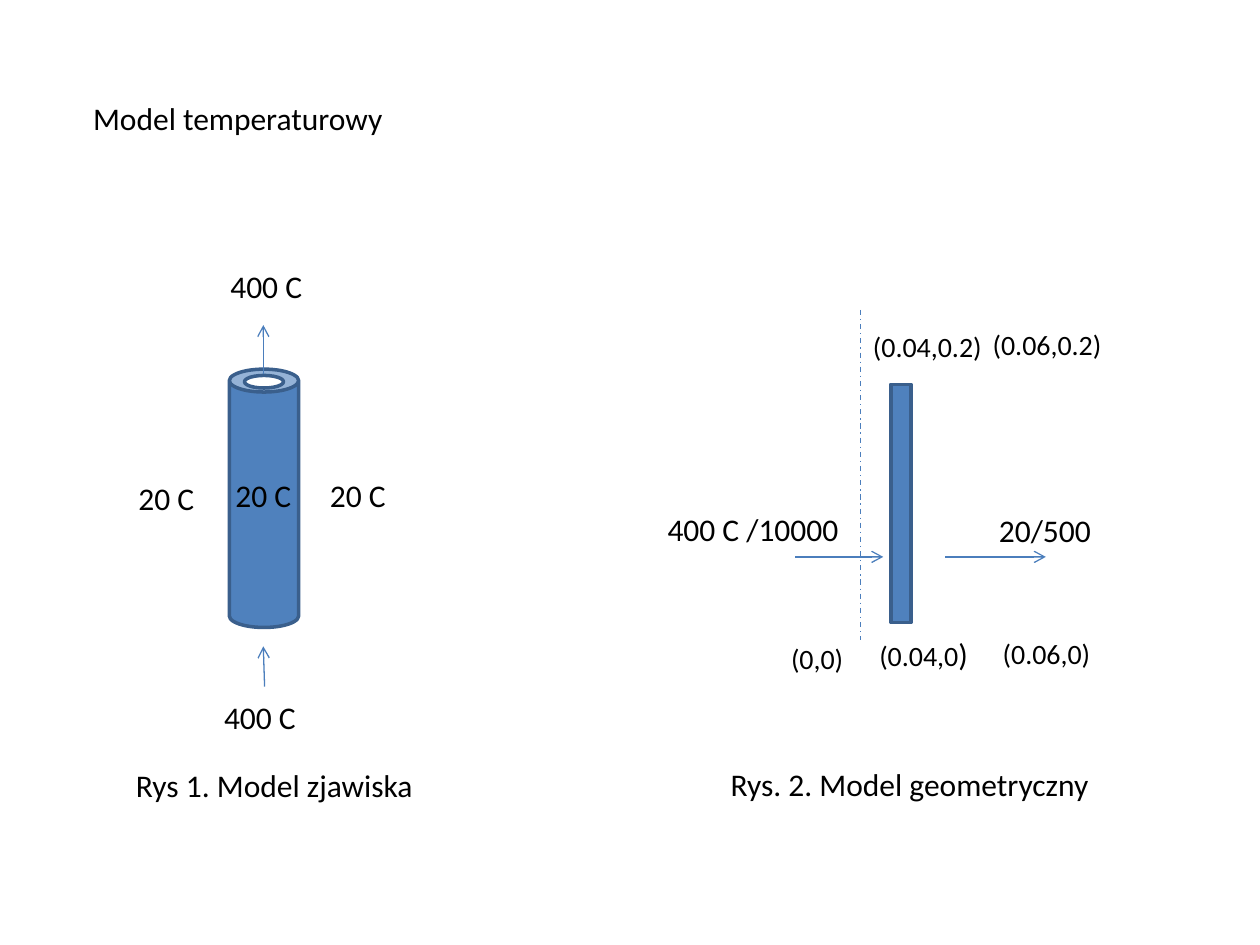
from typing import NamedTuple

from lxml import etree
from pptx import Presentation
from pptx.dml.color import RGBColor
from pptx.enum.dml import MSO_LINE
from pptx.enum.shapes import MSO_CONNECTOR, MSO_SHAPE
from pptx.enum.text import MSO_AUTO_SIZE
from pptx.oxml.ns import qn
from pptx.util import Pt

EMU_PER_PX = 9144  # 100 px to the inch
STRAIGHT = MSO_CONNECTOR.STRAIGHT
RECTANGLE, CAN, OVAL = MSO_SHAPE.RECTANGLE, MSO_SHAPE.CAN, MSO_SHAPE.OVAL
DASH_DOT = MSO_LINE.DASH_DOT
NO_AUTO_SIZE = MSO_AUTO_SIZE.NONE

FONT = "Calibri"
BLACK, WHITE = "000000", "FFFFFF"
BLUE, OUTLINE, LINE_BLUE = "4F81BD", "3A5F8C", "4B7EBC"


class Label(NamedTuple):
    text: str
    left: int
    top: int
    width: int
    height: int = 40
    size: int = 18
    large_end: str = ""  # closing characters set at 18 pt


class Line(NamedTuple):
    x1: int
    y1: int
    x2: int
    y2: int


class Solid(NamedTuple):
    kind: int
    left: int
    top: int
    width: int
    height: int
    fill: str = BLUE


TITLE = Label("Model temperaturowy", 64, 74, 252)
CAPTIONS = [
    Label("Rys 1. Model zjawiska", 98, 603, 242),
    Label("Rys. 2. Model geometryczny", 570, 602, 307),
]

WALL = Solid(RECTANGLE, 707, 305, 16, 189)
AXIS = Line(683, 246, 683, 508)
COORDINATES = [
    Label("(0,0)", 618, 504, 62, 37, 16),
    Label("(0.04,0", 688, 499, 92, 40, 16, ")"),
    Label("(0.06,0)", 786, 500, 91, 37, 16),
    Label("(0.04,0.2)", 683, 257, 108, 37, 16),
    Label("(0.06,0.2)", 778, 255, 108, 37, 16),
]

HEAT_ARROWS = [Line(631, 442, 701, 442), Line(750, 442, 830, 442)]
HEAT_LABELS = [
    Label("400 C /10000", 520, 400, 157),
    Label("20/500", 783, 401, 94),
]

PIPE = Solid(CAN, 182, 293, 55, 205)
PIPE_OPENING = Solid(OVAL, 194, 298, 31, 10, WHITE)
FLOW_ARROWS = [Line(210, 545, 209, 513), Line(209, 297, 209, 258)]
PIPE_LABELS = [
    Label("400 C", 173, 207, 78),
    Label("400 C", 168, 549, 84),
    Label("20 C", 252, 373, 65),
    Label("20 C", 100, 375, 65),
    Label("20 C", 177, 373, 65),
]


def px(length: int) -> int:
    return length * EMU_PER_PX


def color(value: str) -> RGBColor:
    return RGBColor.from_string(value)


def add_label(shapes, label: Label) -> None:
    box = shapes.add_textbox(px(label.left), px(label.top), px(label.width), px(label.height))
    frame = box.text_frame
    frame.text = label.text
    frame.word_wrap = False
    frame.auto_size = NO_AUTO_SIZE
    paragraph = frame.paragraphs[0]
    if label.large_end:
        paragraph.add_run().text = label.large_end
    for run, size in zip(paragraph.runs, (label.size, 18)):
        run.font.name = FONT
        run.font.size = Pt(size)
        run.font.color.rgb = color(BLACK)


def add_solid(shapes, solid: Solid):
    shape = shapes.add_shape(solid.kind, px(solid.left), px(solid.top), px(solid.width), px(solid.height))
    shape.shadow.inherit = False
    shape.fill.solid()
    shape.fill.fore_color.rgb = color(solid.fill)
    shape.line.color.rgb = color(OUTLINE)
    shape.line.width = Pt(2)
    return shape


def add_line(shapes, line: Line):
    connector = shapes.add_connector(STRAIGHT, px(line.x1), px(line.y1), px(line.x2), px(line.y2))
    connector.line.color.rgb = color(LINE_BLUE)
    connector.line.width = Pt(0.75)
    etree.SubElement(connector._element.spPr, qn("a:effectLst"))
    return connector


def add_arrow(shapes, line: Line) -> None:
    connector = add_line(shapes, line)
    etree.SubElement(connector.line._get_or_add_ln(), qn("a:tailEnd"), type="arrow")


def add_all(add_item, shapes, items: list) -> None:
    for item in items:
        add_item(shapes, item)


def main() -> None:
    presentation = Presentation()
    presentation.slide_width, presentation.slide_height = px(1000), px(750)
    slide = presentation.slides.add_slide(presentation.slide_layouts[6])

    # Geometric model: wall section, symmetry axis and corner coordinates
    geometry = slide.shapes.add_group_shape().shapes
    add_solid(geometry, WALL)
    add_line(geometry, AXIS).line.dash_style = DASH_DOT
    add_all(add_label, geometry, COORDINATES)

    # Heat flow through the wall
    heat = slide.shapes.add_group_shape().shapes
    add_all(add_arrow, heat, HEAT_ARROWS)
    add_all(add_label, heat, HEAT_LABELS)

    add_label(slide.shapes, TITLE)

    # Model of the phenomenon: pipe with flow and temperatures
    pipe = slide.shapes.add_group_shape().shapes
    add_solid(pipe, PIPE).adjustments[0] = 0.33
    add_solid(pipe, PIPE_OPENING)
    add_all(add_arrow, pipe, FLOW_ARROWS)
    add_all(add_label, pipe, PIPE_LABELS)

    add_all(add_label, slide.shapes, CAPTIONS)
    presentation.save("out.pptx")


if __name__ == "__main__":
    main()
